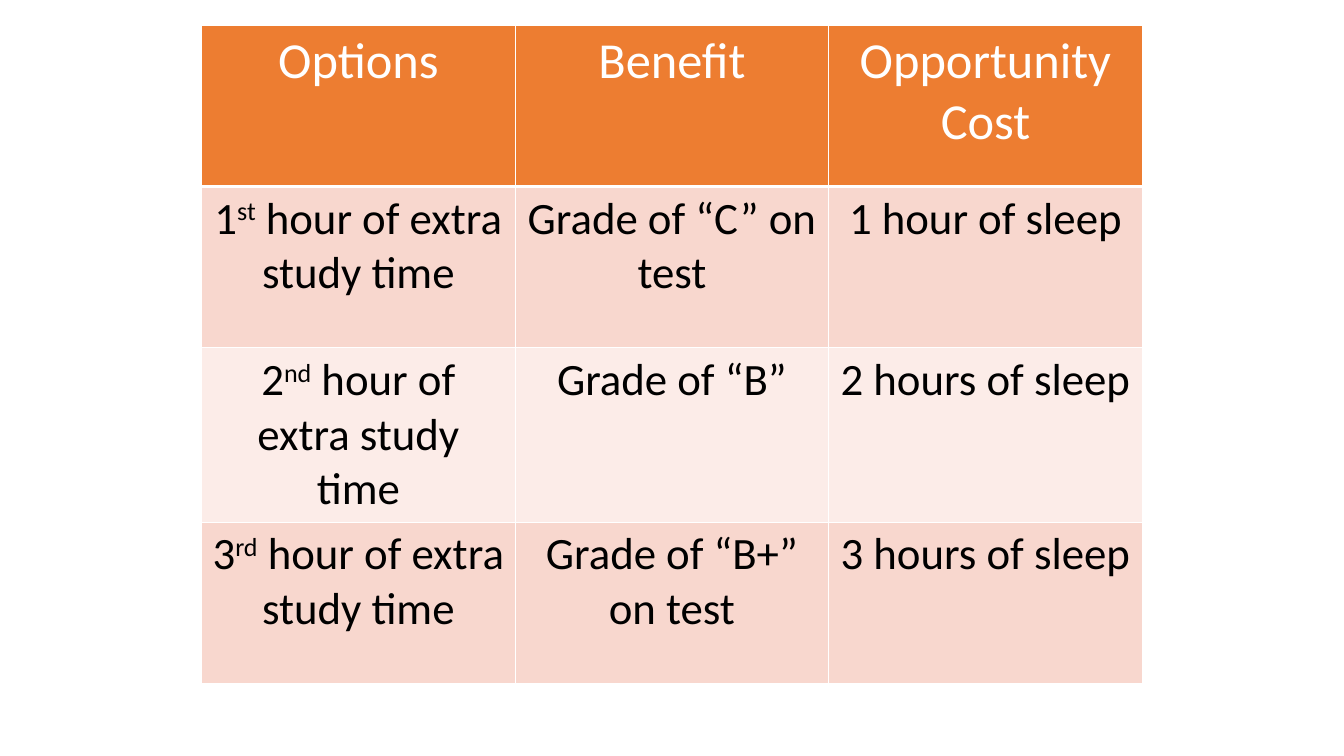
from lxml import etree
from pptx import Presentation
from pptx.dml.color import RGBColor
from pptx.enum.text import PP_ALIGN
from pptx.oxml.ns import qn
from pptx.util import Inches, Pt

CENTER = PP_ALIGN.CENTER
WHITE = RGBColor(0xFF, 0xFF, 0xFF)
BLACK = RGBColor(0x00, 0x00, 0x00)
ORANGE = RGBColor(0xED, 0x7D, 0x31)
DARK_BAND = RGBColor(0xF8, 0xD7, 0xCE)
LIGHT_BAND = RGBColor(0xFC, 0xEC, 0xE8)

ROWS = [
    ["Options", "Benefit", "Opportunity Cost"],
    [("1", "st", " hour of extra study time"), "Grade of “C” on test", "1 hour of sleep"],
    [("2", "nd", " hour of extra study time"), "Grade of “B”", "2 hours of sleep"],
    [("3", "rd", " hour of extra study time"), "Grade of “B+” on test", "3 hours of sleep"],
]
ROW_FILLS = [ORANGE, DARK_BAND, LIGHT_BAND, DARK_BAND]
COLUMN_WIDTH = Inches(3.11)
ROW_HEIGHT = Inches(1.6)


def add_border(cell, side, width):
    line = etree.SubElement(cell._tc.get_or_add_tcPr(), qn(f"a:{side}"), w=str(Pt(width)))
    fill = etree.SubElement(line, qn("a:solidFill"))
    etree.SubElement(fill, qn("a:srgbClr"), val=str(WHITE))


presentation = Presentation()
presentation.slide_width = Inches(13.33)
presentation.slide_height = Inches(7.5)
slide = presentation.slides.add_slide(presentation.slide_layouts[6])

column_count = len(ROWS[0])
table = slide.shapes.add_table(
    len(ROWS), column_count, Inches(2), Inches(0.25),
    COLUMN_WIDTH * column_count, ROW_HEIGHT * len(ROWS),
).table

for row_index, (row, row_fill) in enumerate(zip(ROWS, ROW_FILLS)):
    is_header = row_index == 0
    table.rows[row_index].height = ROW_HEIGHT
    for column_index, content in enumerate(row):
        cell = table.cell(row_index, column_index)
        for side in ("lnL", "lnR", "lnT", "lnB"):
            add_border(cell, side, 3 if is_header and side == "lnB" else 1)
        cell.fill.solid()
        cell.fill.fore_color.rgb = row_fill

        paragraph = cell.text_frame.paragraphs[0]
        paragraph.alignment = CENTER
        parts = (content,) if isinstance(content, str) else content
        for part_index, part in enumerate(parts):
            run = paragraph.add_run()
            run.text = part
            run.font.name = "Calibri"
            run.font.size = Pt(36 if is_header else 32)
            run.font.bold = False
            run.font.color.rgb = WHITE if is_header else BLACK
            if part_index == 1:
                run.font._element.set("baseline", "30000")

presentation.save("out.pptx")
